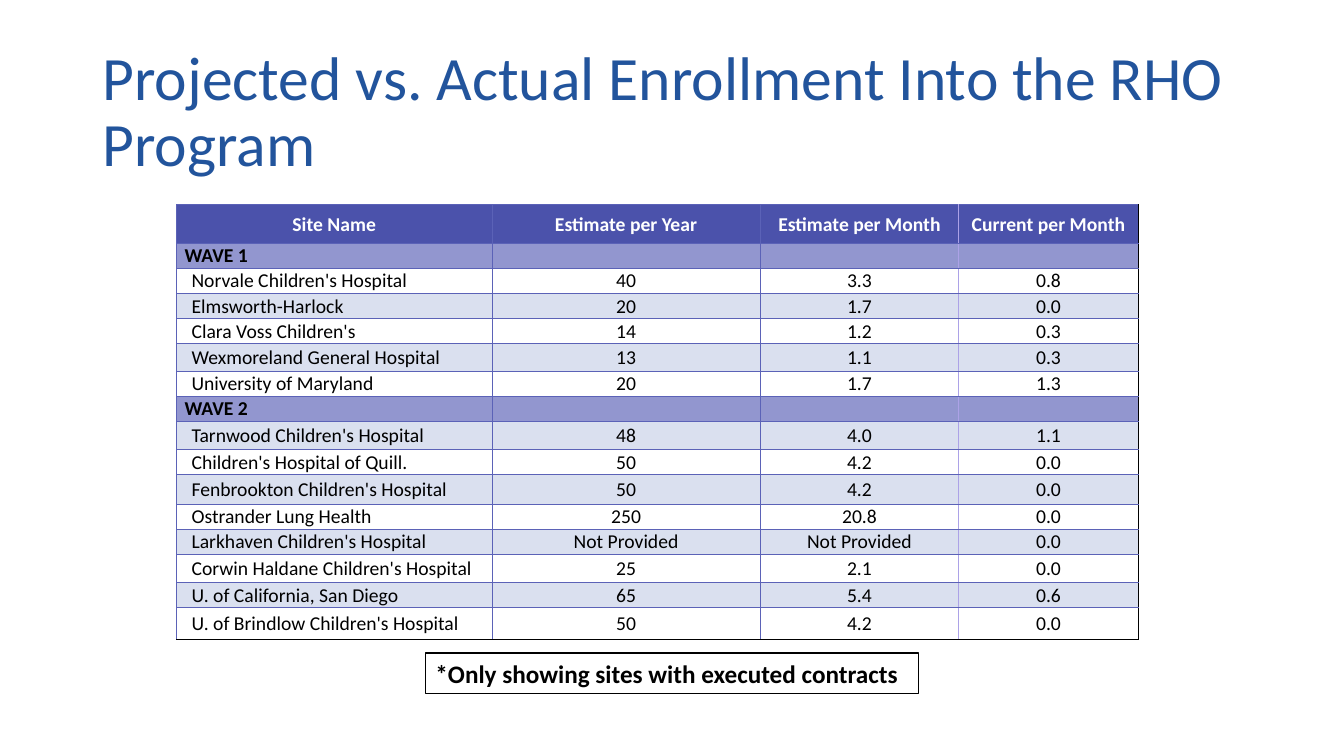
from lxml.etree import SubElement
from pptx import Presentation
from pptx.dml.color import RGBColor
from pptx.enum.shapes import MSO_SHAPE
from pptx.enum.text import MSO_ANCHOR, PP_ALIGN
from pptx.oxml.ns import qn
from pptx.util import Inches, Pt

COLORS = {
    "title": "22549C",
    "header": "4B52AB",
    "wave": "9296CF",
    "band": "DAE0EF",
    "grid": "5B62B7",
    "divider": "ACA2E7",
    "white": "FFFFFF",
    "black": "000000",
}


def style_text(paragraph, size, color, bold=False):
    for run in paragraph.runs:
        run.font.name = "Calibri"
        run.font.size = Pt(size)
        run.font.bold = bold
        run.font.color.rgb = RGBColor.from_string(COLORS[color])


def add_border(cell, side, color, points):
    """Draw one cell edge; side is L, R, T or B, added in that order before the fill."""
    edge = SubElement(cell._tc.get_or_add_tcPr(), qn(f"a:ln{side}"), w=str(Pt(points)))
    SubElement(SubElement(edge, qn("a:solidFill")), qn("a:srgbClr"), val=COLORS[color])


presentation = Presentation()
presentation.slide_width = Inches(13.33)
presentation.slide_height = Inches(7.5)
slide = presentation.slides.add_slide(presentation.slide_layouts[6])

# Title
title = slide.shapes.add_textbox(Inches(0.92), Inches(0.4), Inches(11.5), Inches(1.45))
title.text_frame.word_wrap = True
title.text_frame.vertical_anchor = MSO_ANCHOR.MIDDLE
title.text_frame.text = "Projected vs. Actual Enrollment Into the RHO Program"
title.text_frame.paragraphs[0].line_spacing = 0.9
style_text(title.text_frame.paragraphs[0], 44, "title")

# Enrollment table: row height, row kind, cell texts
enrollment = [
    (0.38, "header", ["Site Name", "Estimate per Year", "Estimate per Month", "Current per Month"]),
    (0.25, "wave", ["WAVE 1", "", "", ""]),
    (0.25, "white", ["Norvale Children's Hospital", "40", "3.3", "0.8"]),
    (0.25, "band", ["Elmsworth-Harlock", "20", "1.7", "0.0"]),
    (0.25, "white", ["Clara Voss Children's", "14", "1.2", "0.3"]),
    (0.27, "band", ["Wexmoreland General Hospital", "13", "1.1", "0.3"]),
    (0.25, "white", ["University of Maryland", "20", "1.7", "1.3"]),
    (0.25, "wave", ["WAVE 2", "", "", ""]),
    (0.28, "band", ["Tarnwood Children's Hospital", "48", "4.0", "1.1"]),
    (0.25, "white", ["Children's Hospital of Quill.", "50", "4.2", "0.0"]),
    (0.29, "band", ["Fenbrookton Children's Hospital", "50", "4.2", "0.0"]),
    (0.25, "white", ["Ostrander Lung Health", "250", "20.8", "0.0"]),
    (0.25, "band", ["Larkhaven Children's Hospital", "Not Provided", "Not Provided", "0.0"]),
    (0.28, "white", ["Corwin Haldane Children's Hospital", "25", "2.1", "0.0"]),
    (0.25, "band", ["U. of California, San Diego", "65", "5.4", "0.6"]),
    (0.31, "white", ["U. of Brindlow Children's Hospital", "50", "4.2", "0.0"]),
]
column_widths = [3.13, 2.66, 1.97, 1.78]
table = slide.shapes.add_table(
    len(enrollment), len(column_widths), Inches(1.75), Inches(2.03),
    Inches(sum(column_widths)), Inches(sum(height for height, _, _ in enrollment)),
).table
table.horz_banding = False
for column, width in zip(table.columns, column_widths):
    column.width = Inches(width)

grid, divider, outline = ("grid", 0.5), ("divider", 1), ("black", 0.5)
left_edges = [grid, grid, grid, divider]
right_edges = [grid, grid, divider, outline]
site_indents = {"header": 0.01, "wave": 0.08}

for row, (height, kind, texts) in enumerate(enrollment):
    table.rows[row].height = Inches(height)
    bottom_edge = outline if row == len(enrollment) - 1 else grid
    for col, text in enumerate(texts):
        cell = table.cell(row, col)
        cell.margin_left = Inches(0.01 if col else site_indents.get(kind, 0.15))
        cell.margin_right = cell.margin_top = Inches(0.01)
        cell.margin_bottom = 0
        cell.vertical_anchor = MSO_ANCHOR.MIDDLE
        edges = [left_edges[col], right_edges[col], grid, bottom_edge]
        for side, (color, points) in zip("LRTB", edges):
            add_border(cell, side, color, points)
        cell.fill.solid()
        cell.fill.fore_color.rgb = RGBColor.from_string(COLORS[kind])

        paragraph = cell.text_frame.paragraphs[0]
        paragraph.text = text
        paragraph.alignment = PP_ALIGN.CENTER if col or kind == "header" else PP_ALIGN.LEFT
        style_text(paragraph, 14, "white" if kind == "header" else "black",
                   bold=kind in ("header", "wave"))
        if not text:  # keeps empty cells from stretching the row
            SubElement(paragraph._p, qn("a:endParaRPr"), sz="1400")

# Footnote
footnote = slide.shapes.add_shape(
    MSO_SHAPE.RECTANGLE, Inches(4.22), Inches(6.48), Inches(4.89), Inches(0.4))
footnote.shadow.inherit = False
footnote.fill.solid()
footnote.fill.fore_color.rgb = RGBColor.from_string(COLORS["white"])
footnote.line.color.rgb = RGBColor.from_string(COLORS["black"])
footnote.line.width = Pt(1)
footnote.text_frame.word_wrap = True
footnote.text_frame.vertical_anchor = MSO_ANCHOR.TOP
footnote.text_frame.text = "*Only showing sites with executed contracts"
footnote.text_frame.paragraphs[0].alignment = PP_ALIGN.LEFT
style_text(footnote.text_frame.paragraphs[0], 18, "black", bold=True)

presentation.save("out.pptx")
